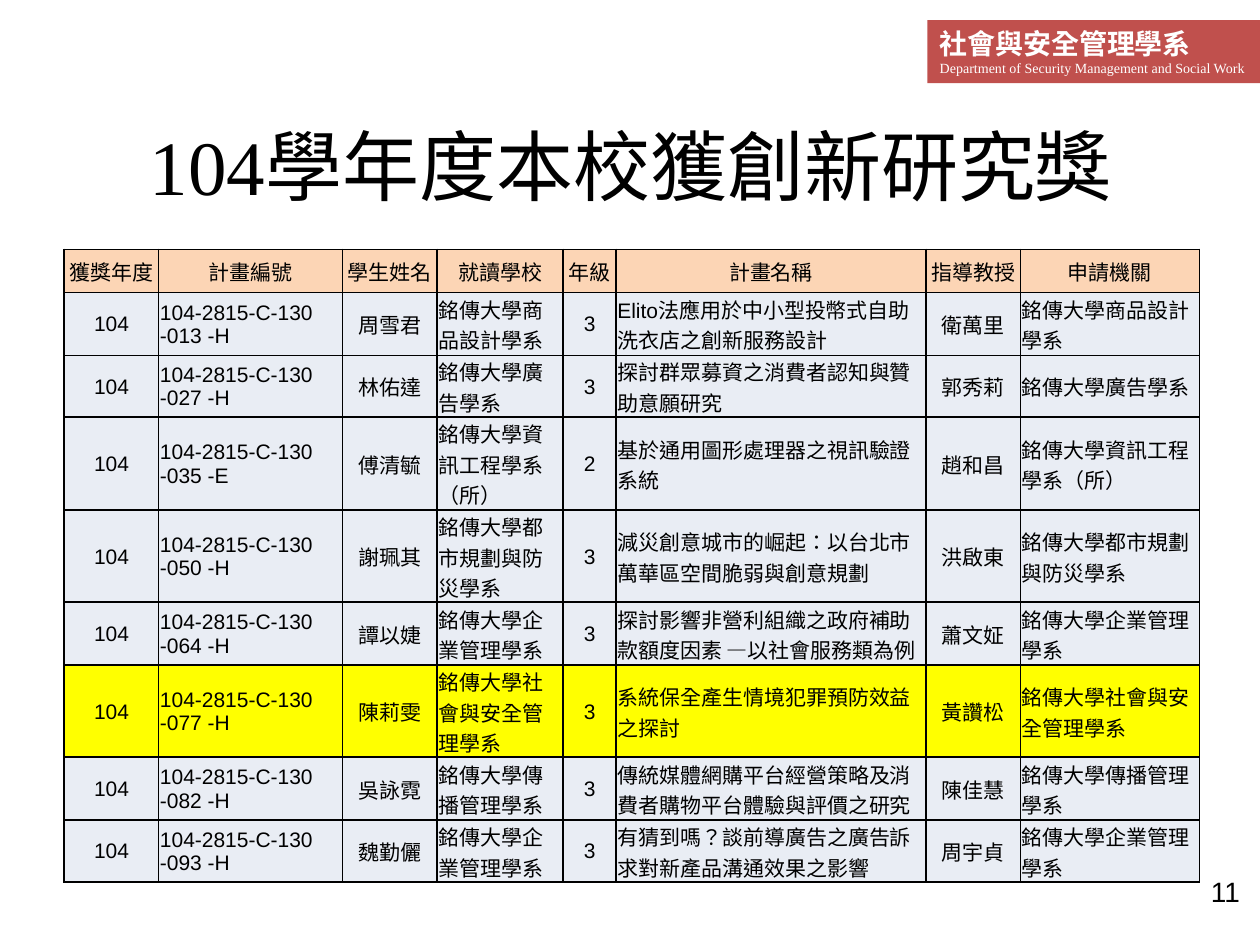
from lxml.etree import SubElement
from pptx import Presentation
from pptx.dml.color import RGBColor
from pptx.enum.lang import MSO_LANGUAGE_ID
from pptx.enum.shapes import MSO_SHAPE
from pptx.enum.text import MSO_ANCHOR, PP_ALIGN
from pptx.oxml.ns import qn
from pptx.util import Inches, Pt

COLORS = {
    "banner": "C0504D",
    "white": "FFFFFF",
    "black": "000000",
    "header": "FCD5B5",
    "body": "E9EDF4",
    "highlight": "FFFF00",
}
SERIF, SANS = "Times New Roman", "Arial"
COLUMN_WIDTHS = [0.75, 1.46, 0.75, 1, 0.42, 2.46, 0.75, 1.42]
ROW_HEIGHTS = [0.34, 0.5, 0.49, 0.74, 0.73, 0.5, 0.73, 0.5, 0.49]
LEFT_ALIGNED_COLUMNS = {1, 3, 5, 7}
HIGHLIGHT_ROW = 6
HEADINGS = ["獲獎年度", "計畫編號", "學生姓名", "就讀學校", "年級", "計畫名稱", "指導教授", "申請機關"]
AWARDS = [
    ("013 -H", "周雪君", "商品設計學系", "3", "Elito法應用於中小型投幣式自助洗衣店之創新服務設計", "衛萬里"),
    ("027 -H", "林佑達", "廣告學系", "3", "探討群眾募資之消費者認知與贊助意願研究", "郭秀莉"),
    ("035 -E", "傅清毓", "資訊工程學系（所）", "2", "基於通用圖形處理器之視訊驗證系統", "趙和昌"),
    ("050 -H", "謝珮其", "都市規劃與防災學系", "3", "減災創意城市的崛起：以台北市萬華區空間脆弱與創意規劃", "洪啟東"),
    ("064 -H", "譚以婕", "企業管理學系", "3", "探討影響非營利組織之政府補助款額度因素 —以社會服務類為例", "蕭文姃"),
    ("077 -H", "陳莉雯", "社會與安全管理學系", "3", "系統保全產生情境犯罪預防效益之探討", "黃讚松"),
    ("082 -H", "吳詠霓", "傳播管理學系", "3", "傳統媒體網購平台經營策略及消費者購物平台體驗與評價之研究", "陳佳慧"),
    ("093 -H", "魏勤儷", "企業管理學系", "3", "有猜到嗎？談前導廣告之廣告訴求對新產品溝通效果之影響", "周宇貞"),
]


def color(name):
    """Return the named palette colour."""
    return RGBColor.from_string(COLORS[name])


def write(para, text, size, font, tint="black", bold=False, align=PP_ALIGN.LEFT):
    """Add one styled run of Traditional Chinese to a paragraph."""
    para.alignment = align
    span = para.add_run()
    span.text = text
    span.font.language_id = MSO_LANGUAGE_ID.TRADITIONAL_CHINESE
    span.font.size = Pt(size)
    span.font.name = font
    span.font.bold = bold
    span.font.color.rgb = color(tint)


def add_banner(page):
    """Add the department banner at the top right."""
    box = page.shapes.add_shape(
        MSO_SHAPE.RECTANGLE, Inches(7.36), Inches(0.16), Inches(2.64), Inches(0.5)
    )
    box.shadow.inherit = False
    box.fill.solid()
    box.fill.fore_color.rgb = color("banner")
    box.line.fill.background()
    frame = box.text_frame
    frame.word_wrap = True
    frame.vertical_anchor = MSO_ANCHOR.TOP
    write(frame.paragraphs[0], "社會與安全管理學系", 16, SERIF, "white", bold=True)
    write(frame.add_paragraph(), "Department of Security Management and Social Work", 8, SERIF, "white")


def add_label(page, text, left, top, width, height, size, font, anchor):
    """Add a centred one-line text box."""
    box = page.shapes.add_textbox(Inches(left), Inches(top), Inches(width), Inches(height))
    frame = box.text_frame
    frame.word_wrap = True
    frame.vertical_anchor = anchor
    write(frame.paragraphs[0], text, size, font, align=PP_ALIGN.CENTER)


def add_borders(cell):
    """Draw a thin black line on every side of a cell."""
    properties = cell._tc.get_or_add_tcPr()
    for side in ("a:lnL", "a:lnR", "a:lnT", "a:lnB"):
        line = SubElement(properties, qn(side), w=str(Pt(1)))
        fill = SubElement(line, qn("a:solidFill"))
        SubElement(fill, qn("a:srgbClr"), val=COLORS["black"])


def fill_cell(cell, text, fill, align):
    """Set the text, borders and fill of a table cell."""
    cell.margin_left = cell.margin_right = cell.margin_top = Inches(0.01)
    cell.margin_bottom = 0
    cell.vertical_anchor = MSO_ANCHOR.MIDDLE
    write(cell.text_frame.paragraphs[0], text, 12, SANS, align=align)
    add_borders(cell)
    cell.fill.solid()
    cell.fill.fore_color.rgb = color(fill)


def award_row(award):
    """Expand an award record into its eight cell texts."""
    number, student, department, grade, project, professor = award
    school = f"銘傳大學{department}"
    return ["104", f"104-2815-C-130 -{number}", student, school, grade, project, professor, school]


def add_award_table(page):
    """Add the table of awarded projects."""
    rows = [HEADINGS] + [award_row(award) for award in AWARDS]
    table = page.shapes.add_table(
        len(rows), len(HEADINGS), Inches(0.51), Inches(1.98), Inches(9), Inches(sum(ROW_HEIGHTS))
    ).table
    for column, width in zip(table.columns, COLUMN_WIDTHS):
        column.width = Inches(width)
    for row, height in zip(table.rows, ROW_HEIGHTS):
        row.height = Inches(height)
    fills = {0: "header", HIGHLIGHT_ROW: "highlight"}
    for r, texts in enumerate(rows):
        for c, text in enumerate(texts):
            left_aligned = r > 0 and c in LEFT_ALIGNED_COLUMNS
            align = PP_ALIGN.LEFT if left_aligned else PP_ALIGN.CENTER
            fill_cell(table.cell(r, c), text, fills.get(r, "body"), align)


def main():
    """Build and save the slide."""
    deck = Presentation()
    deck.slide_width, deck.slide_height = Inches(10), Inches(7.5)
    page = deck.slides.add_slide(deck.slide_layouts[6])
    add_banner(page)
    add_label(page, "104學年度本校獲創新研究獎", 0.51, 0.76, 9, 1.09, 44, SERIF, MSO_ANCHOR.MIDDLE)
    add_award_table(page)
    add_label(page, "11", 9.49, 6.89, 0.47, 0.37, 16, SANS, MSO_ANCHOR.TOP)
    deck.save("out.pptx")


if __name__ == "__main__":
    main()
